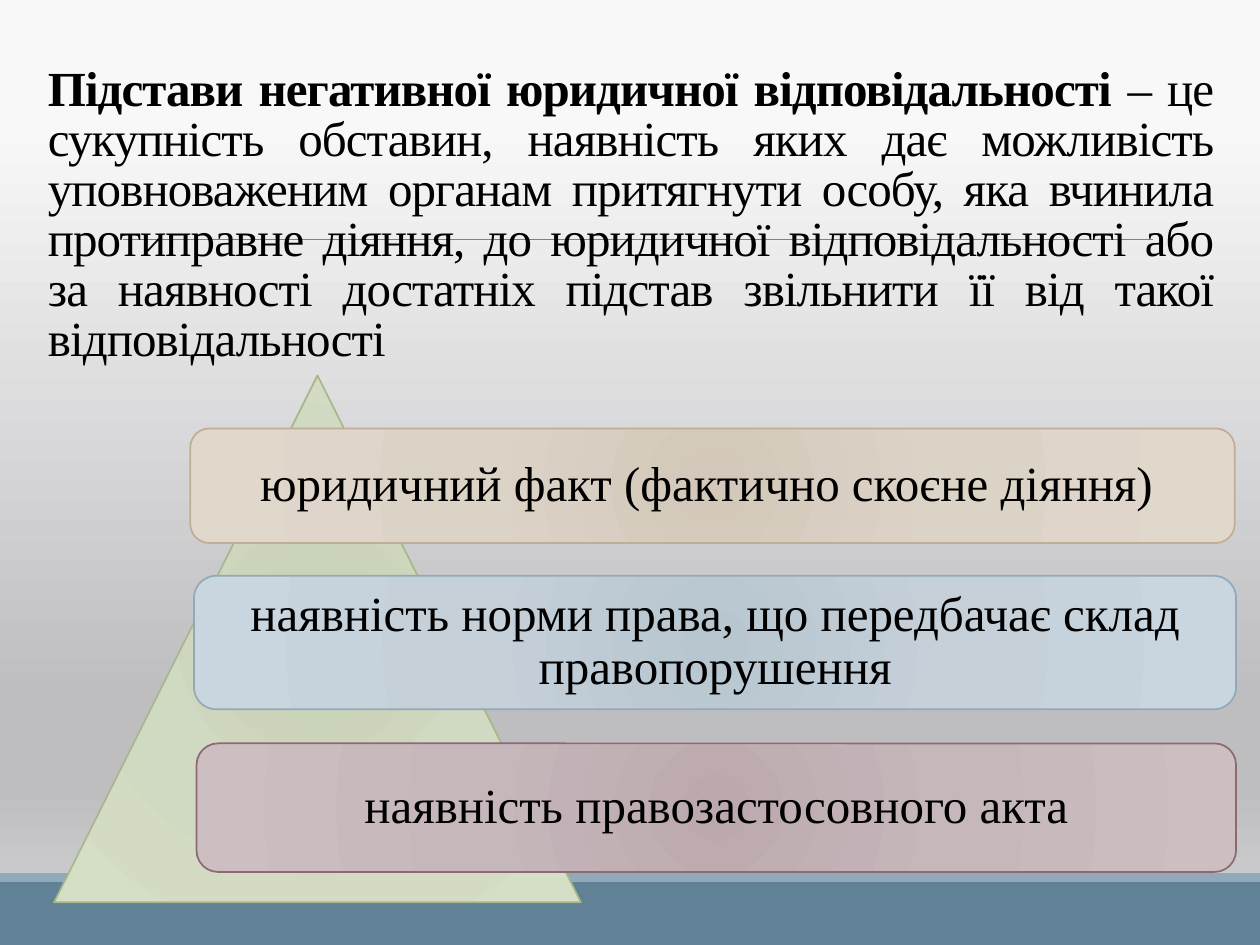
from lxml import etree
from pptx import Presentation
from pptx.dml.color import RGBColor
from pptx.enum.shapes import MSO_CONNECTOR, MSO_SHAPE
from pptx.enum.text import MSO_ANCHOR, MSO_AUTO_SIZE, PP_ALIGN
from pptx.oxml.ns import qn
from pptx.util import Inches, Pt

COLORS = {
    "text": "000000",
    "rule": "808080",
    "band": "618197",
    "strip": "92A9B9",
    "page": [(13, "F8F8F8"), (74, "BEBEC1"), (83, "BEBEC1"), (100, "D4D4D5")],
    "green": [(0, "C5D0B4"), (45, "D0D9C1"), (100, "D5DFC6")],
    "green line": "A7B789",
    "sand": [(0, "D3C8BA"), (45, "DCD3C7"), (100, "E1D8CC")],
    "sand line": "BEAE98",
    "blue": [(0, "B8C6D0"), (45, "C5D0D9"), (100, "C9D6DF")],
    "blue line": "92A9B9",
    "plum": [(0, "BBA9AE"), (45, "C6B7BB"), (100, "CDBEC2")],
    "plum line": "8D6974",
}


def set_gradient(owner, fill, stops, radial):
    fill.gradient()
    gradient = next(owner.iter(qn("a:gradFill")))
    for child in list(gradient):
        gradient.remove(child)
    stop_list = etree.SubElement(gradient, qn("a:gsLst"))
    for position, color in stops:
        stop = etree.SubElement(stop_list, qn("a:gs"), pos=str(position * 1000))
        etree.SubElement(stop, qn("a:srgbClr"), val=color)
    if radial:
        center = etree.SubElement(gradient, qn("a:path"), path="circle")
        sides = dict.fromkeys("ltrb", "100000")
        etree.SubElement(center, qn("a:fillToRect"), **sides)
    else:
        etree.SubElement(gradient, qn("a:lin"), ang="5400000", scaled="0")


def format_span(span, bold=False):
    span.font.name = "Times New Roman"
    span.font.size = Pt(28)
    span.font.bold = bold
    span.font.color.rgb = RGBColor.from_string(COLORS["text"])


deck = Presentation()
deck.slide_width, deck.slide_height = Inches(10), Inches(7.5)
page = deck.slides.add_slide(deck.slide_layouts[5])
set_gradient(page.background._cSld, page.background.fill, COLORS["page"], False)

rule = page.shapes.add_connector(
    MSO_CONNECTOR.STRAIGHT, Inches(0.98), Inches(1.9), Inches(9.15), Inches(1.9)
)
rule.line.color.rgb = RGBColor.from_string(COLORS["rule"])
rule.line.width = Pt(0.5)
etree.SubElement(rule._element.spPr, qn("a:effectLst"))

for name, top, height in [("band", 7, 0.5), ("strip", 6.93, 0.07)]:
    bar = page.shapes.add_shape(
        MSO_SHAPE.RECTANGLE, 0, Inches(top), Inches(10), Inches(height)
    )
    bar.shadow.inherit = False
    bar.fill.solid()
    bar.fill.fore_color.rgb = RGBColor.from_string(COLORS[name])
    bar.line.fill.background()

title = page.shapes.title
title.left, title.top = Inches(0.28), Inches(0.52)
title.width, title.height = Inches(9.45), Inches(2.44)
title.text_frame.auto_size = MSO_AUTO_SIZE.NONE
title.text_frame.vertical_anchor = MSO_ANCHOR.BOTTOM
para = title.text_frame.paragraphs[0]
para.alignment = PP_ALIGN.JUSTIFY
para.line_spacing = 0.85
for words, bold in [
    ("Підстави негативної юридичної відповідальності ", True),
    (
        "– це сукупність обставин, наявність яких дає можливість "
        "уповноваженим органам притягнути особу, яка вчинила протиправне "
        "діяння, до юридичної відповідальності або за наявності достатніх "
        "підстав звільнити її від такої відповідальності",
        False,
    ),
]:
    span = para.add_run()
    span.text = words
    format_span(span, bold)
    span.font._element.set("spc", "-50")
page.shapes._spTree.append(title._element)

pyramid = page.shapes.add_group_shape()
for preset, color, left, top, width, height, words in [
    (MSO_SHAPE.ISOSCELES_TRIANGLE, "green", 0.43, 2.98, 4.18, 4.18, ""),
    (MSO_SHAPE.ROUNDED_RECTANGLE, "sand", 1.51, 3.4, 8.29, 0.91,
     "юридичний факт (фактично скоєне діяння) "),
    (MSO_SHAPE.ROUNDED_RECTANGLE, "blue", 1.54, 4.57, 8.27, 1.06,
     "наявність норми права, що передбачає склад правопорушення"),
    (MSO_SHAPE.ROUNDED_RECTANGLE, "plum", 1.56, 5.9, 8.25, 1.02,
     "наявність правозастосовного акта"),
]:
    box = pyramid.shapes.add_shape(
        preset, Inches(left), Inches(top), Inches(width), Inches(height)
    )
    box.shadow.inherit = False
    set_gradient(box._element.spPr, box.fill, COLORS[color], True)
    box.line.color.rgb = RGBColor.from_string(COLORS[color + " line"])
    box.line.width = Pt(1)
    if words:
        frame = box.text_frame
        frame.text = words
        frame.word_wrap = True
        frame.vertical_anchor = MSO_ANCHOR.MIDDLE
        frame.margin_left = frame.margin_right = Inches(0.17)
        frame.margin_top = frame.margin_bottom = Inches(0.05)
        para = frame.paragraphs[0]
        para.alignment = PP_ALIGN.CENTER
        para.line_spacing = 0.9
        format_span(para.runs[0])

deck.save("out.pptx")
